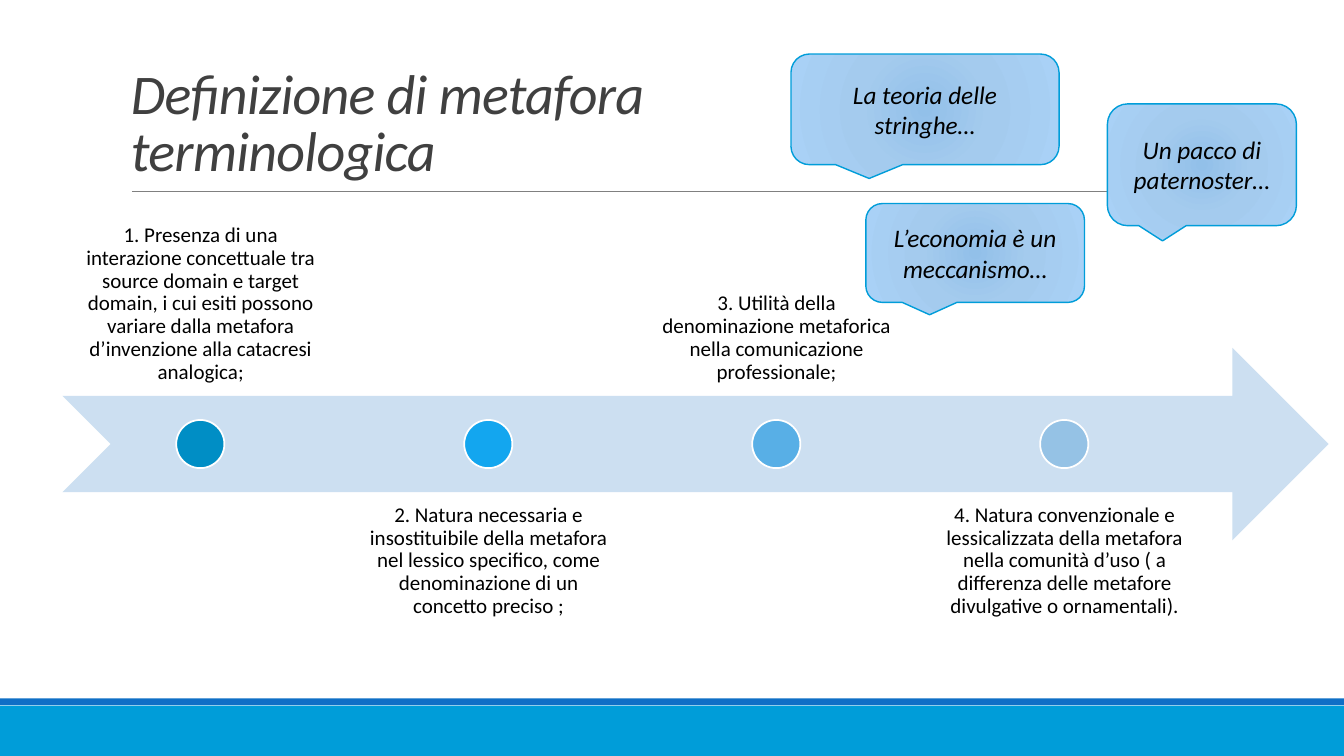
"""Build the slide on the definition of a terminological metaphor."""
from lxml import etree
from pptx import Presentation
from pptx import util as u
from pptx.dml import color
from pptx.enum import shapes, text
from pptx.oxml import ns

KIND = shapes.MSO_SHAPE
SIDE = text.MSO_ANCHOR
ALIGN = text.PP_ALIGN


def rgb(code):
    """Turn a hex string into a colour."""
    return color.RGBColor.from_string(code)


def pts(*nums):
    """Turn numbers into point lengths."""
    return [u.Pt(num) for num in nums]


class Deck:
    """Hold the style and the current slide."""

    font = "Calibri"
    edge = "009DD9"
    glow = ((0, "92C0E9"), (45, "A4CBEE"), (100, "A9D1F6"))

    def __init__(self):
        """Open a blank slide of 960 by 540 points."""
        self.prs = Presentation()
        self.prs.slide_width, self.prs.slide_height = pts(960, 540)
        self.slide = self.prs.slides.add_slide(self.prs.slide_layouts[6])

    def shape(self, kind, box, fill=None, line=None, width=1):
        """Add a preset shape."""
        item = self.slide.shapes.add_shape(kind, *pts(*box))
        item.shadow.inherit = False
        if fill:
            item.fill.solid()
            item.fill.fore_color.rgb = rgb(fill)
        if line:
            item.line.color.rgb = rgb(line)
            item.line.width = u.Pt(width)
        else:
            item.line.fill.background()
        return item

    def rule(self, start, end, tint, width):
        """Add a straight line."""
        item = self.slide.shapes.add_connector(
            shapes.MSO_CONNECTOR.STRAIGHT, *pts(*start, *end))
        item.line.color.rgb = rgb(tint)
        item.line.width = u.Pt(width)
        etree.SubElement(item._element.spPr, ns.qn("a:effectLst"))

    def words(self, item, phrase, size, tint="000000", side=SIDE.MIDDLE,
              align=ALIGN.CENTER, space=None, slant=False):
        """Fill a shape with one styled run."""
        frame = item.text_frame
        frame.word_wrap = True
        frame.vertical_anchor = side
        para = frame.paragraphs[0]
        para.alignment = align
        para.line_spacing = space
        run = para.add_run()
        run.text = phrase
        run.font.name = self.font
        run.font.size = u.Pt(size)
        run.font.italic = slant
        run.font.color.rgb = rgb(tint)
        return run

    def label(self, box, phrase, size, inset=None, **style):
        """Add a text box."""
        item = self.slide.shapes.add_textbox(*pts(*box))
        if inset:
            frame = item.text_frame
            frame.margin_left = frame.margin_right = u.Pt(inset)
            frame.margin_top = frame.margin_bottom = u.Pt(inset)
        return self.words(item, phrase, size, **style)

    def bubble(self, box, phrase):
        """Add a callout with a radial gradient."""
        item = self.shape(KIND.ROUNDED_RECTANGULAR_CALLOUT, box,
                          line=self.edge)
        grad = etree.Element(ns.qn("a:gradFill"), rotWithShape="1")
        stops = etree.SubElement(grad, ns.qn("a:gsLst"))
        for pos, code in self.glow:
            stop = etree.SubElement(stops, ns.qn("a:gs"), pos=str(pos * 1000))
            etree.SubElement(stop, ns.qn("a:srgbClr"), val=code)
        ring = etree.SubElement(grad, ns.qn("a:path"), {"path": "circle"})
        etree.SubElement(ring, ns.qn("a:fillToRect"),
                         {key: "100000" for key in "ltrb"})
        item._element.spPr.insert(2, grad)
        self.words(item, phrase, 18, slant=True)

    def step(self, num, phrase, tint):
        """Add a dot on the arrow and its text, above or below in turn."""
        shift = 205.7 * num
        low = num % 2
        self.label((45.4 + shift, 351.4 if low else 145.4, 195.8, 137.5),
                   phrase, 15, inset=8.9, space=0.9,
                   side=SIDE.TOP if low else SIDE.BOTTOM)
        self.shape(KIND.OVAL, (125.9 + shift, 300, 34.4, 34.4),
                   tint, "FFFFFF", 1.25)


STEPS = (
    ("1. Presenza di una interazione concettuale tra source domain e target "
     "domain, i cui esiti possono variare dalla metafora d’invenzione alla "
     "catacresi analogica;", "008EC5"),
    ("2. Natura necessaria e insostituibile della metafora nel lessico "
     "specifico, come denominazione di un concetto preciso ;", "13A6EF"),
    ("3. Utilità della denominazione metaforica nella comunicazione "
     "professionale;", "58AFE6"),
    ("4. Natura convenzionale e lessicalizzata della metafora nella comunità "
     "d’uso ( a differenza delle metafore divulgative o ornamentali).",
     "95C2E5"),
)
BUBBLES = (
    ((565, 38.6, 191.5, 79), "La teoria delle stringhe…"),
    ((791, 74.2, 135, 87), "Un pacco di paternoster…"),
    ((618.5, 145.4, 156.2, 70.6), "L’economia è un meccanismo…"),
)


def main():
    """Draw the slide and save it."""
    deck = Deck()
    deck.shape(KIND.RECTANGLE, (0, 504, 960, 36), "009DD9")
    deck.shape(KIND.RECTANGLE, (0, 498.8, 960, 5), "0F6FC6")
    deck.rule((94.3, 136.6), (879, 136.6), "808080", 0.5)
    title = deck.label((86.4, -18, 492, 152),
                       "Definizione di metafora terminologica", 40,
                       tint="404040", side=SIDE.BOTTOM, align=ALIGN.LEFT,
                       space=0.85, slant=True)
    title.font._element.set("spc", "-50")
    deck.shape(KIND.NOTCHED_RIGHT_ARROW, (44.6, 248.4, 904.4, 137.5), "CCDFF1")
    for num, (phrase, tint) in enumerate(STEPS):
        deck.step(num, phrase, tint)
    for box, phrase in BUBBLES:
        deck.bubble(box, phrase)
    deck.prs.save("out.pptx")


if __name__ == "__main__":
    main()
